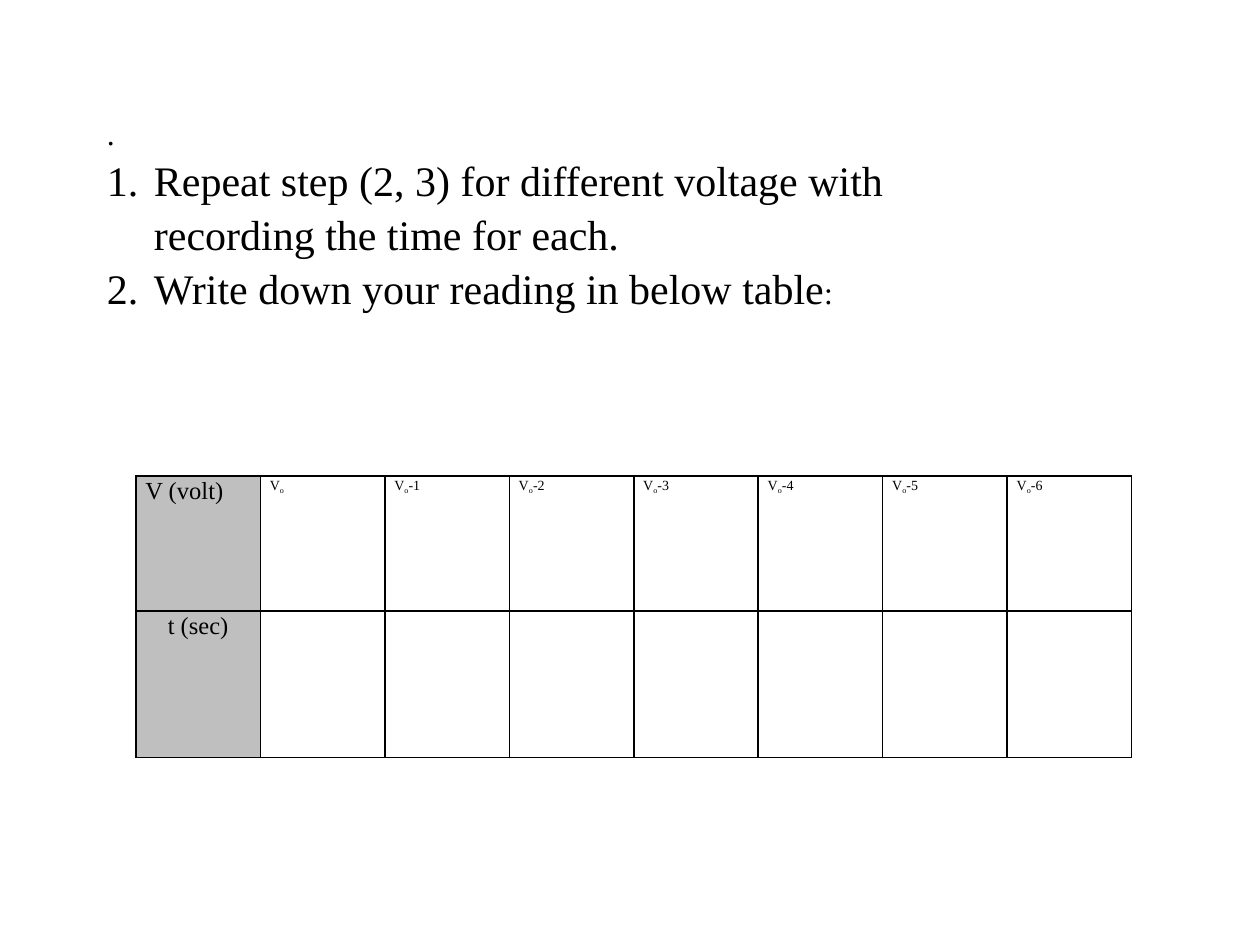
import lxml.etree
import pptx
import pptx.dml.color
import pptx.enum.text
import pptx.oxml.ns
import pptx.util

Cm = pptx.util.Cm
Pt = pptx.util.Pt
qn = pptx.oxml.ns.qn

BLACK = pptx.dml.color.RGBColor(0x00, 0x00, 0x00)
GRAY = pptx.dml.color.RGBColor(0xBF, 0xBF, 0xBF)
FONT = "Times New Roman"
LINE_SPACING = 1.07
VOLTAGES = 7


def add_run(p, text, size, subscript=False):
    r = p.add_run()
    r.text = text
    r.font.name = FONT
    r.font.size = Pt(size)
    r.font.color.rgb = BLACK
    if subscript:
        r.font._element.set("baseline", "-25000")


def format_item(p, numbered):
    p.line_spacing = LINE_SPACING
    p.space_before = Pt(0)
    pPr = p._p.get_or_add_pPr()
    indent = Cm(0.95) if numbered else 0
    pPr.set("marL", str(indent))
    pPr.set("indent", str(-indent))
    if numbered:
        font = lxml.etree.SubElement(pPr, qn("a:buFont"))
        font.set("typeface", FONT)
        number = lxml.etree.SubElement(pPr, qn("a:buAutoNum"))
        number.set("type", "arabicPeriod")
    else:
        lxml.etree.SubElement(pPr, qn("a:buNone"))


def fill_steps(body):
    body.left, body.top = Cm(1.9), Cm(2.11)
    body.width, body.height = Cm(17.98), Cm(4.37)
    tf = body.text_frame
    tf.word_wrap = True
    tf.auto_size = pptx.enum.text.MSO_AUTO_SIZE.SHAPE_TO_FIT_TEXT
    tf.vertical_anchor = pptx.enum.text.MSO_ANCHOR.TOP
    items = [
        (False, [(".", 18)]),
        (True, [("Repeat step (2, 3) for different voltage with "
                 "recording the time for each.", 24)]),
        (True, [("Write down your reading in below table", 24), (":", 18)]),
    ]
    for i, (numbered, runs) in enumerate(items):
        p = tf.add_paragraph() if i else tf.paragraphs[0]
        format_item(p, numbered)
        for text, size in runs:
            add_run(p, text, size)


def format_cell(cell, fill=None):
    cell.margin_left = cell.margin_right = Cm(0.19)
    cell.margin_top = cell.margin_bottom = 0
    cell.text_frame.paragraphs[0].line_spacing = LINE_SPACING
    tcPr = cell._tc.get_or_add_tcPr()
    for side in ("a:lnL", "a:lnR", "a:lnT", "a:lnB"):
        ln = lxml.etree.SubElement(tcPr, qn(side))
        ln.set("w", str(Pt(1)))
        solid = lxml.etree.SubElement(ln, qn("a:solidFill"))
        lxml.etree.SubElement(solid, qn("a:srgbClr")).set("val", str(BLACK))
    if fill is None:
        cell.fill.background()
    else:
        cell.fill.solid()
        cell.fill.fore_color.rgb = fill


def add_readings_table(s):
    col_width, row_heights = Cm(2.51), (Cm(2.72), Cm(2.95))
    cols = VOLTAGES + 1
    table = s.shapes.add_table(len(row_heights), cols, Cm(2.74), Cm(9.6),
                               col_width * cols, sum(row_heights)).table
    table.first_row = table.horz_banding = False
    for col in table.columns:
        col.width = col_width
    for row, height in zip(table.rows, row_heights):
        row.height = height
        for i, cell in enumerate(row.cells):
            format_cell(cell, None if i else GRAY)

    for i, label in enumerate(("V (volt)", "t (sec)")):
        add_run(table.cell(i, 0).text_frame.paragraphs[0], label, 14)
    seconds = table.cell(1, 0).text_frame.paragraphs[0]
    seconds.alignment = pptx.enum.text.PP_ALIGN.CENTER

    for drop in range(VOLTAGES):
        p = table.cell(0, drop + 1).text_frame.paragraphs[0]
        add_run(p, "V", 8)
        add_run(p, "o", 8, subscript=True)
        if drop:
            add_run(p, f"-{drop}", 8)


def main():
    prs = pptx.Presentation()
    prs.slide_width, prs.slide_height = Cm(25.4), Cm(19.05)
    s = prs.slides.add_slide(prs.slide_layouts[1])
    title = s.shapes.title
    title._element.getparent().remove(title._element)
    fill_steps(s.placeholders[1])
    add_readings_table(s)
    prs.save("out.pptx")


if __name__ == "__main__":
    main()
